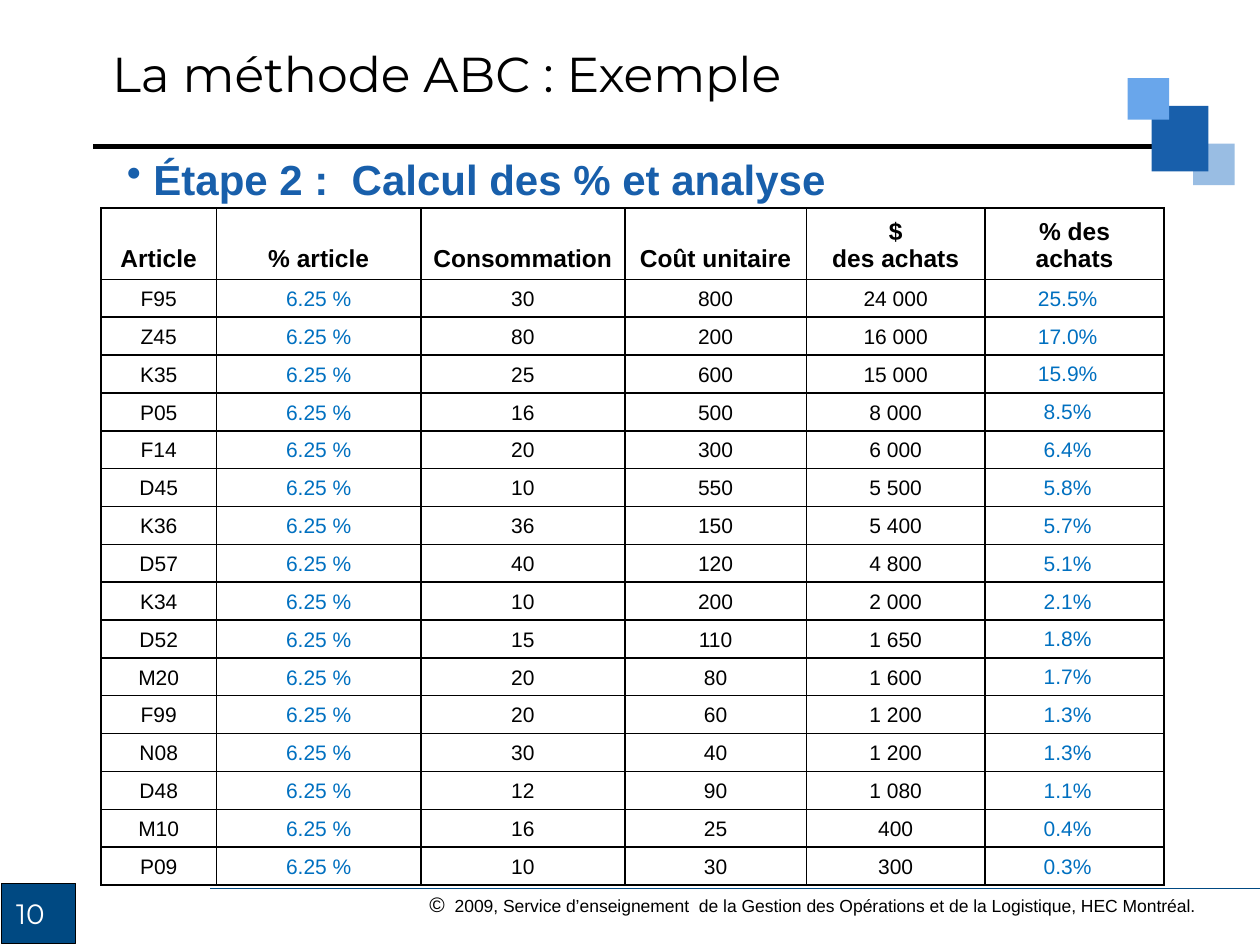
from typing import NamedTuple

from lxml.etree import SubElement
from pptx import Presentation
from pptx.dml.color import RGBColor
from pptx.enum.shapes import MSO_CONNECTOR, MSO_SHAPE
from pptx.enum.text import MSO_ANCHOR, PP_ALIGN
from pptx.oxml import parse_xml
from pptx.oxml.ns import nsdecls, qn
from pptx.util import Inches, Pt

BLACK = RGBColor(0x00, 0x00, 0x00)
WHITE = RGBColor(0xFF, 0xFF, 0xFF)
NAVY = RGBColor(0x00, 0x49, 0x82)
BLUE = RGBColor(0x18, 0x5F, 0xAB)
LIGHT_BLUE = RGBColor(0x69, 0xA6, 0xEB)
PALE_BLUE = RGBColor(0x99, 0xBD, 0xE3)
PERCENT_BLUE = RGBColor(0x00, 0x70, 0xC0)


class Block(NamedTuple):
    left: float
    top: float
    width: float
    height: float
    color: RGBColor
    outlined: bool = False


class Rule(NamedTuple):
    left: float
    right: float
    y: float
    weight: float
    color: RGBColor


class Article(NamedTuple):
    code: str
    consumption: str
    unit_cost: str
    purchases: str
    purchase_share: str


PAGE_BLOCK = Block(0.01, 7.01, 0.59, 0.48, NAVY, True)
CORNER_BLOCKS = [
    Block(9.47, 1.14, 0.33, 0.33, PALE_BLUE),
    Block(9.14, 0.84, 0.45, 0.52, BLUE),
    Block(8.95, 0.62, 0.33, 0.33, LIGHT_BLUE),
]
FOOTER_RULE = Rule(1.67, 10, 7.05, 0.75, NAVY)
TITLE_RULE = Rule(0.74, 9.41, 1.16, 2.75, BLACK)

ARTICLE_SHARE = "6.25 %"
HEADERS = ["Article", "% article", "Consommation", "Coût unitaire",
           "$\ndes achats", "% des achats"]
COLUMN_WIDTHS = [0.92, 1.62, 1.62, 1.44, 1.42, 1.42]
SHARE_COLUMNS = (1, 5)
ARTICLES = [
    Article("F95", "30", "800", "24 000", "25.5%"),
    Article("Z45", "80", "200", "16 000", "17.0%"),
    Article("K35", "25", "600", "15 000", "15.9%"),
    Article("P05", "16", "500", "8 000", "8.5%"),
    Article("F14", "20", "300", "6 000", "6.4%"),
    Article("D45", "10", "550", "5 500", "5.8%"),
    Article("K36", "36", "150", "5 400", "5.7%"),
    Article("D57", "40", "120", "4 800", "5.1%"),
    Article("K34", "10", "200", "2 000", "2.1%"),
    Article("D52", "15", "110", "1 650", "1.8%"),
    Article("M20", "20", "80", "1 600", "1.7%"),
    Article("F99", "20", "60", "1 200", "1.3%"),
    Article("N08", "30", "40", "1 200", "1.3%"),
    Article("D48", "12", "90", "1 080", "1.1%"),
    Article("M10", "16", "25", "400", "0.4%"),
    Article("P09", "10", "30", "300", "0.3%"),
]


def set_font(font, size: float, color: RGBColor, name: str = "Arial", bold: bool = False) -> None:
    font.name = name
    font.size = Pt(size)
    font.bold = bold
    font.color.rgb = color


def draw_block(slide, block: Block) -> None:
    shape = slide.shapes.add_shape(
        MSO_SHAPE.RECTANGLE, Inches(block.left), Inches(block.top),
        Inches(block.width), Inches(block.height))
    shape.shadow.inherit = False
    shape.fill.solid()
    shape.fill.fore_color.rgb = block.color
    if block.outlined:
        shape.line.color.rgb = BLACK
        shape.line.width = Pt(0.75)
    else:
        shape.line.fill.background()


def draw_rule(slide, rule: Rule) -> None:
    connector = slide.shapes.add_connector(
        MSO_CONNECTOR.STRAIGHT, Inches(rule.left), Inches(rule.y),
        Inches(rule.right), Inches(rule.y))
    connector.line.color.rgb = rule.color
    connector.line.width = Pt(rule.weight)
    SubElement(connector._element.spPr, qn("a:effectLst"))


def add_text(slide, left: float, top: float, width: float, height: float, text: str = ""):
    """Add a wrapping text box and return its first paragraph."""
    box = slide.shapes.add_textbox(Inches(left), Inches(top), Inches(width), Inches(height))
    box.text_frame.word_wrap = True
    paragraph = box.text_frame.paragraphs[0]
    paragraph.text = text
    return paragraph


def add_bullet(paragraph, indent: float) -> None:
    properties = paragraph._p.get_or_add_pPr()
    properties.set("marL", str(Inches(indent)))
    properties.set("indent", str(-Inches(indent)))
    SubElement(properties, qn("a:buChar")).set("char", "•")


def add_borders(cell) -> None:
    properties = cell._tc.get_or_add_tcPr()
    for position, side in enumerate(("lnL", "lnR", "lnT", "lnB")):
        properties.insert(position, parse_xml(
            f'<a:{side} {nsdecls("a")} w="{Pt(1)}"><a:solidFill>'
            f'<a:srgbClr val="{BLACK}"/></a:solidFill></a:{side}>'))


def fill_cell(cell, text: str, size: float, color: RGBColor, bold: bool) -> None:
    cell.text = text
    cell.vertical_anchor = MSO_ANCHOR.BOTTOM
    cell.fill.background()
    add_borders(cell)
    for paragraph in cell.text_frame.paragraphs:
        paragraph.alignment = PP_ALIGN.CENTER
        set_font(paragraph.font, size, color, bold=bold)


def draw_table(slide) -> None:
    rows = [HEADERS] + [
        [article.code, ARTICLE_SHARE, *article[1:]] for article in ARTICLES]
    header_height, row_height = 0.56, 0.27
    table = slide.shapes.add_table(
        len(rows), len(HEADERS), Inches(0.8), Inches(1.65), Inches(sum(COLUMN_WIDTHS)),
        Inches(header_height + row_height * len(ARTICLES))).table
    table.first_row = False
    table.horz_banding = False
    for column, width in zip(table.columns, COLUMN_WIDTHS):
        column.width = Inches(width)
    for row_index, values in enumerate(rows):
        is_header = row_index == 0
        table.rows[row_index].height = Inches(header_height if is_header else row_height)
        for column_index, value in enumerate(values):
            cell = table.cell(row_index, column_index)
            is_share = not is_header and column_index in SHARE_COLUMNS
            fill_cell(cell, value, 14 if is_header else 12,
                      PERCENT_BLUE if is_share else BLACK, is_header)
            if is_share and column_index == SHARE_COLUMNS[-1]:
                cell.vertical_anchor = MSO_ANCHOR.MIDDLE
                cell.margin_left = cell.margin_top = Inches(0.01)
                cell.margin_right = Inches(0.12)
                cell.margin_bottom = 0


def main() -> None:
    presentation = Presentation()
    presentation.slide_width = Inches(10)
    presentation.slide_height = Inches(7.5)
    slide = presentation.slides.add_slide(presentation.slide_layouts[5])

    draw_block(slide, PAGE_BLOCK)
    page_number = add_text(slide, 0.03, 7.07, 0.5, 0.37, "10")
    set_font(page_number.font, 16, WHITE, "Montserrat")

    draw_rule(slide, FOOTER_RULE)
    copyright_line = add_text(slide, 3.31, 7.03, 6.42, 0.3)
    for text, size in (
            ("©", 12),
            ("  2009, Service d’enseignement  de la Gestion des Opérations "
             "et de la Logistique, HEC Montréal.", 10)):
        run = copyright_line.add_run()
        run.text = text
        set_font(run.font, size, BLACK)

    draw_rule(slide, TITLE_RULE)
    for block in CORNER_BLOCKS:
        draw_block(slide, block)

    step = add_text(slide, 0.91, 1.17, 8.23, 0.48, "Étape 2 :  Calcul des % et analyse")
    add_bullet(step, 0.21)
    set_font(step.font, 24, BLUE, bold=True)

    title = slide.shapes.title
    title.left, title.top = Inches(0.79), Inches(0)
    title.width, title.height = Inches(8.16), Inches(1.15)
    title.text_frame.text = "La méthode ABC : Exemple"
    title.text_frame.vertical_anchor = MSO_ANCHOR.MIDDLE
    heading = title.text_frame.paragraphs[0]
    heading.alignment = PP_ALIGN.LEFT
    set_font(heading.font, 28, BLACK, "Montserrat")

    draw_table(slide)
    presentation.save("out.pptx")


if __name__ == "__main__":
    main()
